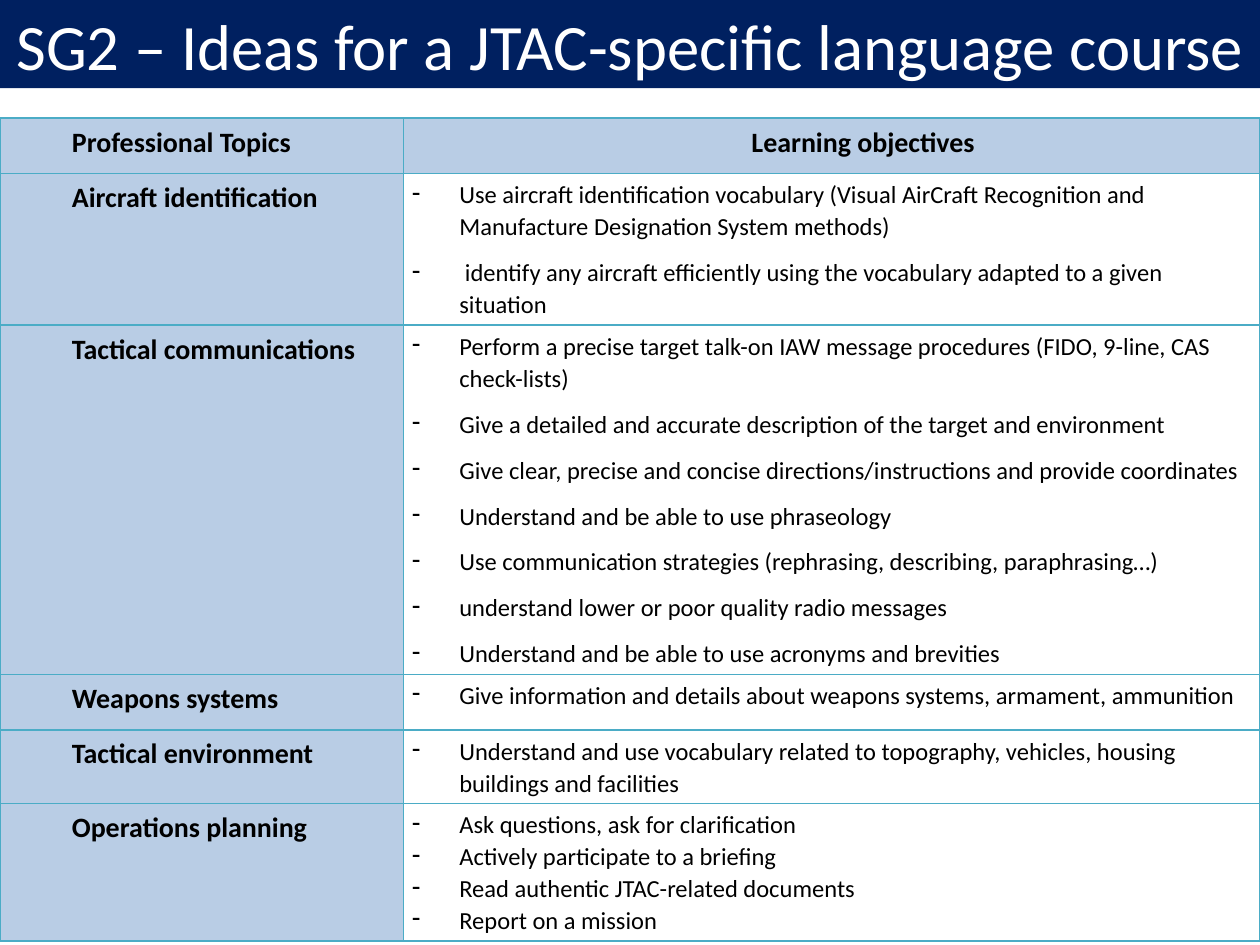
from dataclasses import dataclass

from lxml.etree import SubElement
from pptx import Presentation
from pptx.dml.color import RGBColor
from pptx.enum.text import MSO_ANCHOR, MSO_AUTO_SIZE, PP_ALIGN
from pptx.oxml import parse_xml
from pptx.oxml.ns import nsdecls, qn
from pptx.util import Cm, Pt


@dataclass(frozen=True)
class Theme:
    font: str = "Calibri"
    navy: str = "002060"
    white: str = "FFFFFF"
    black: str = "000000"
    pale_blue: str = "B9CDE5"
    border: str = "4BACC6"
    title_size: float = 37
    heading_size: float = 16
    body_size: float = 14
    border_width: float = 1


HEADINGS = ("Professional Topics", "Learning objectives")
COLUMN_WIDTHS = (8.13, 17.27)
HEADER_HEIGHT = 1.12
# Topic, row height in cm, space after each objective in points, objectives
TOPICS = [
    ("Aircraft identification", 3.02, 8, [
        "Use aircraft identification vocabulary (Visual AirCraft Recognition and "
        "Manufacture Designation System methods)",
        " identify any aircraft efficiently using the vocabulary adapted to a given situation",
    ]),
    ("Tactical communications", 7.01, 8, [
        "Perform a precise target talk-on IAW message procedures (FIDO, 9-line, CAS check-lists)",
        "Give a detailed and accurate description of the target and environment",
        "Give clear, precise and concise directions/instructions and provide coordinates",
        "Understand and be able to use phraseology",
        "Use communication strategies (rephrasing, describing, paraphrasing…)",
        "understand lower or poor quality radio messages",
        "Understand and be able to use acronyms and brevities",
    ]),
    ("Weapons systems", 1.12, 8, [
        "Give information and details about weapons systems, armament, ammunition",
    ]),
    ("Tactical environment", 1.47, 8, [
        "Understand and use vocabulary related to topography, vehicles, housing "
        "buildings and facilities",
    ]),
    ("Operations planning", 2.75, 0, [
        "Ask questions, ask for clarification",
        "Actively participate to a briefing",
        "Read authentic JTAC-related documents",
        "Report on a mission",
    ]),
]


class SlideBuilder:
    def __init__(self, slide, theme):
        self.slide = slide
        self.theme = theme

    def style_font(self, font, size, color, bold=False):
        font.name = self.theme.font
        font.size = Pt(size)
        font.bold = bold
        font.color.rgb = RGBColor.from_string(color)

    def title(self, text, width, height):
        title = self.slide.shapes.title
        title.left, title.top, title.width, title.height = 0, 0, width, height
        title.fill.solid()
        title.fill.fore_color.rgb = RGBColor.from_string(self.theme.navy)
        frame = title.text_frame
        frame.auto_size = MSO_AUTO_SIZE.NONE
        frame.vertical_anchor = MSO_ANCHOR.MIDDLE
        frame.margin_left = frame.margin_right = Cm(0.1)
        frame.text = text
        paragraph = frame.paragraphs[0]
        paragraph.alignment = PP_ALIGN.CENTER
        self.style_font(paragraph.font, self.theme.title_size, self.theme.white)

    def table(self, top, column_widths, row_heights):
        frame = self.slide.shapes.add_table(
            len(row_heights), len(column_widths), 0, top,
            Cm(sum(column_widths)), Cm(sum(row_heights)))
        table = frame.table
        table.first_row = table.horz_banding = False
        for column, width in zip(table.columns, column_widths):
            column.width = Cm(width)
        for row, height in zip(table.rows, row_heights):
            row.height = Cm(height)
        return table

    def prepare_cell(self, cell):
        cell.margin_left = cell.margin_right = Cm(0.18)
        cell.margin_top = cell.margin_bottom = Cm(0.1)
        properties = cell._tc.get_or_add_tcPr()
        for position, side in enumerate(("lnL", "lnR", "lnT", "lnB")):
            properties.insert(position, parse_xml(
                f'<a:{side} {nsdecls("a")} w="{Pt(self.theme.border_width)}"><a:solidFill>'
                f'<a:srgbClr val="{self.theme.border}"/></a:solidFill></a:{side}>'))

    def format_paragraph(self, paragraph, text, left, indent, space_after):
        paragraph.text = text
        paragraph.line_spacing = 1.07
        paragraph.space_after = Pt(space_after)
        properties = paragraph._p.get_or_add_pPr()
        properties.set("marL", str(Cm(left)))
        properties.set("indent", str(Cm(indent)))
        return properties

    def heading_cell(self, cell, text, alignment=PP_ALIGN.LEFT):
        self.prepare_cell(cell)
        cell.fill.solid()
        cell.fill.fore_color.rgb = RGBColor.from_string(self.theme.pale_blue)
        paragraph = cell.text_frame.paragraphs[0]
        self.format_paragraph(paragraph, text, 1.27, 0, 8)
        paragraph.alignment = alignment
        self.style_font(paragraph.font, self.theme.heading_size, self.theme.black, bold=True)

    def objectives_cell(self, cell, objectives, space_after):
        self.prepare_cell(cell)
        cell.fill.background()
        frame = cell.text_frame
        for index, text in enumerate(objectives):
            paragraph = frame.add_paragraph() if index else frame.paragraphs[0]
            # The closing objective always keeps the full gap below it
            gap = 8 if index == len(objectives) - 1 else space_after
            properties = self.format_paragraph(paragraph, text, 0.95, -0.95, gap)
            SubElement(properties, qn("a:buChar"), char="-")
            self.style_font(paragraph.font, self.theme.body_size, self.theme.black)


def main():
    presentation = Presentation()
    presentation.slide_width, presentation.slide_height = Cm(25.4), Cm(19.05)
    slide = presentation.slides.add_slide(presentation.slide_layouts[5])
    builder = SlideBuilder(slide, Theme())

    # Title band
    builder.title("SG2 – Ideas for a JTAC-specific language course",
                  presentation.slide_width, Cm(1.78))

    # Table with its header row
    heights = [HEADER_HEIGHT] + [height for _, height, _, _ in TOPICS]
    table = builder.table(Cm(2.38), COLUMN_WIDTHS, heights)
    for column, (text, alignment) in enumerate(zip(HEADINGS, (PP_ALIGN.LEFT, PP_ALIGN.CENTER))):
        builder.heading_cell(table.cell(0, column), text, alignment)

    # One row per topic
    for row, (topic, _, space_after, objectives) in enumerate(TOPICS, start=1):
        builder.heading_cell(table.cell(row, 0), topic)
        builder.objectives_cell(table.cell(row, 1), objectives, space_after)

    presentation.save("out.pptx")


if __name__ == "__main__":
    main()
